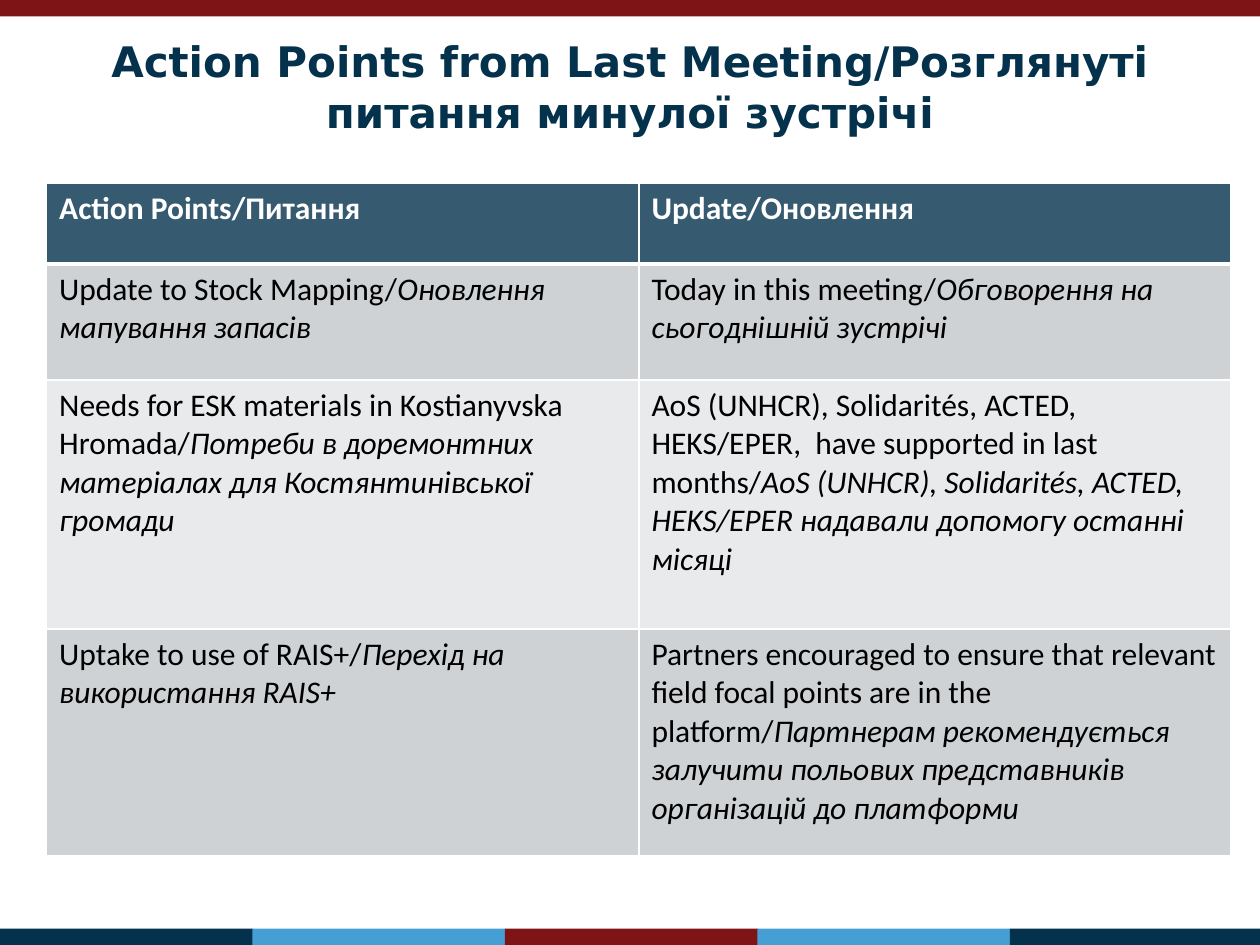
from typing import NamedTuple

import pptx
import pptx.dml.color
import pptx.enum.shapes
import pptx.enum.text
import pptx.oxml
import pptx.oxml.ns
import pptx.util
from lxml import etree

Cm = pptx.util.Cm
Pt = pptx.util.Pt

MAROON, NAVY, SKY = "7F1416", "04314C", "459FD5"
WHITE, BLACK = "FFFFFF", "000000"
HEADER_FILL = "365A70"
BAND_FILLS = ("CED2D5", "E8EAEB")
BAR_HEIGHT = 0.33
FOOTER_STEP = 5.09


class Bar(NamedTuple):
    left: float
    top: float
    width: float
    colour: str


class Entry(NamedTuple):
    english: str
    ukrainian: str


class ActionPoint(NamedTuple):
    topic: Entry
    update: Entry
    height: float


HEADINGS = ("Action Points/Питання", "Update/Оновлення")
HEADING_HEIGHT = 1.63
ACTION_POINTS = [
    ActionPoint(
        Entry("Update to Stock Mapping/", "Оновлення мапування запасів"),
        Entry("Today in this meeting/", "Обговорення на сьогоднішній зустрічі"),
        2.34,
    ),
    ActionPoint(
        Entry("Needs for ESK materials in Kostianyvska Hromada/",
              "Потреби в доремонтних матеріалах для Костянтинівської громади"),
        Entry("AoS (UNHCR), Solidarités, ACTED, HEKS/EPER,  have supported in last months/",
              "AoS (UNHCR), Solidarités, ACTED, HEKS/EPER надавали допомогу останні місяці"),
        5.02,
    ),
    ActionPoint(
        Entry("Uptake to use of RAIS+/", "Перехід на використання RAIS+"),
        Entry("Partners encouraged to ensure that relevant field focal points are in the platform/",
              "Партнерам рекомендується залучити польових представників організацій до платформи"),
        4.57,
    ),
]


def rgb(value: str) -> pptx.dml.color.RGBColor:
    return pptx.dml.color.RGBColor.from_string(value)


def paint(fill, colour: str) -> None:
    fill.solid()
    fill.fore_color.rgb = rgb(colour)


def add_run(paragraph, text: str, colour: str, **overrides) -> None:
    run = paragraph.add_run()
    run.text = text
    font_values = {"name": "Calibri", "size": Pt(18), "bold": False, "italic": False}
    for attribute, value in (font_values | overrides).items():
        setattr(run.font, attribute, value)
    run.font.color.rgb = rgb(colour)


def draw_bar(slide, bar: Bar) -> None:
    strip = slide.shapes.add_shape(
        pptx.enum.shapes.MSO_SHAPE.RECTANGLE,
        Cm(bar.left), Cm(bar.top), Cm(bar.width), Cm(BAR_HEIGHT))
    strip.shadow.inherit = False
    paint(strip.fill, bar.colour)
    strip.line.fill.background()


def draw_title(slide, text: str) -> None:
    title = slide.shapes.add_textbox(Cm(1.27), Cm(0.15), Cm(22.86), Cm(3.18))
    frame = title.text_frame
    frame.word_wrap = True
    frame.vertical_anchor = pptx.enum.text.MSO_ANCHOR.MIDDLE
    heading = frame.paragraphs[0]
    heading.alignment = pptx.enum.text.PP_ALIGN.CENTER
    add_run(heading, text, NAVY, name="DejaVu Sans", size=Pt(24), bold=True)


def set_borders(cell, top: float = 1, bottom: float = 1) -> None:
    properties = cell._tc.get_or_add_tcPr()
    for side, width in {"L": 1, "R": 1, "T": top, "B": bottom}.items():
        edge = etree.SubElement(
            properties, pptx.oxml.ns.qn(f"a:ln{side}"), w=str(Pt(width)))
        solid = etree.SubElement(edge, pptx.oxml.ns.qn("a:solidFill"))
        etree.SubElement(solid, pptx.oxml.ns.qn("a:srgbClr"), val=WHITE)


def draw_action_table(slide) -> None:
    heights = [HEADING_HEIGHT] + [point.height for point in ACTION_POINTS]
    table = slide.shapes.add_table(
        len(heights), len(HEADINGS),
        Cm(0.94), Cm(3.69), Cm(23.88), Cm(sum(heights))).table
    for row, height in zip(table.rows, heights):
        row.height = Cm(height)

    for column, heading in enumerate(HEADINGS):
        cell = table.cell(0, column)
        set_borders(cell, bottom=3)
        paint(cell.fill, HEADER_FILL)
        add_run(cell.text_frame.paragraphs[0], heading, WHITE, bold=True)

    for index, point in enumerate(ACTION_POINTS):
        for column, entry in enumerate((point.topic, point.update)):
            cell = table.cell(index + 1, column)
            set_borders(cell, top=3 if index == 0 else 1)
            paint(cell.fill, BAND_FILLS[index % len(BAND_FILLS)])
            paragraph = cell.text_frame.paragraphs[0]
            add_run(paragraph, entry.english, BLACK)
            add_run(paragraph, entry.ukrainian, BLACK, italic=True)


def main() -> None:
    presentation = pptx.Presentation()
    presentation.slide_width = Cm(25.4)
    presentation.slide_height = Cm(19.05)
    slide = presentation.slides.add_slide(presentation.slide_layouts[6])

    draw_bar(slide, Bar(0, 0, 25.4, MAROON))
    for index, colour in enumerate((NAVY, SKY, MAROON, SKY, NAVY)):
        draw_bar(slide, Bar(index * FOOTER_STEP, 18.72, 5.1, colour))
    draw_title(slide, "Action Points from Last Meeting/Розглянуті питання минулої зустрічі")
    draw_action_table(slide)
    presentation.save("out.pptx")


if __name__ == "__main__":
    main()
